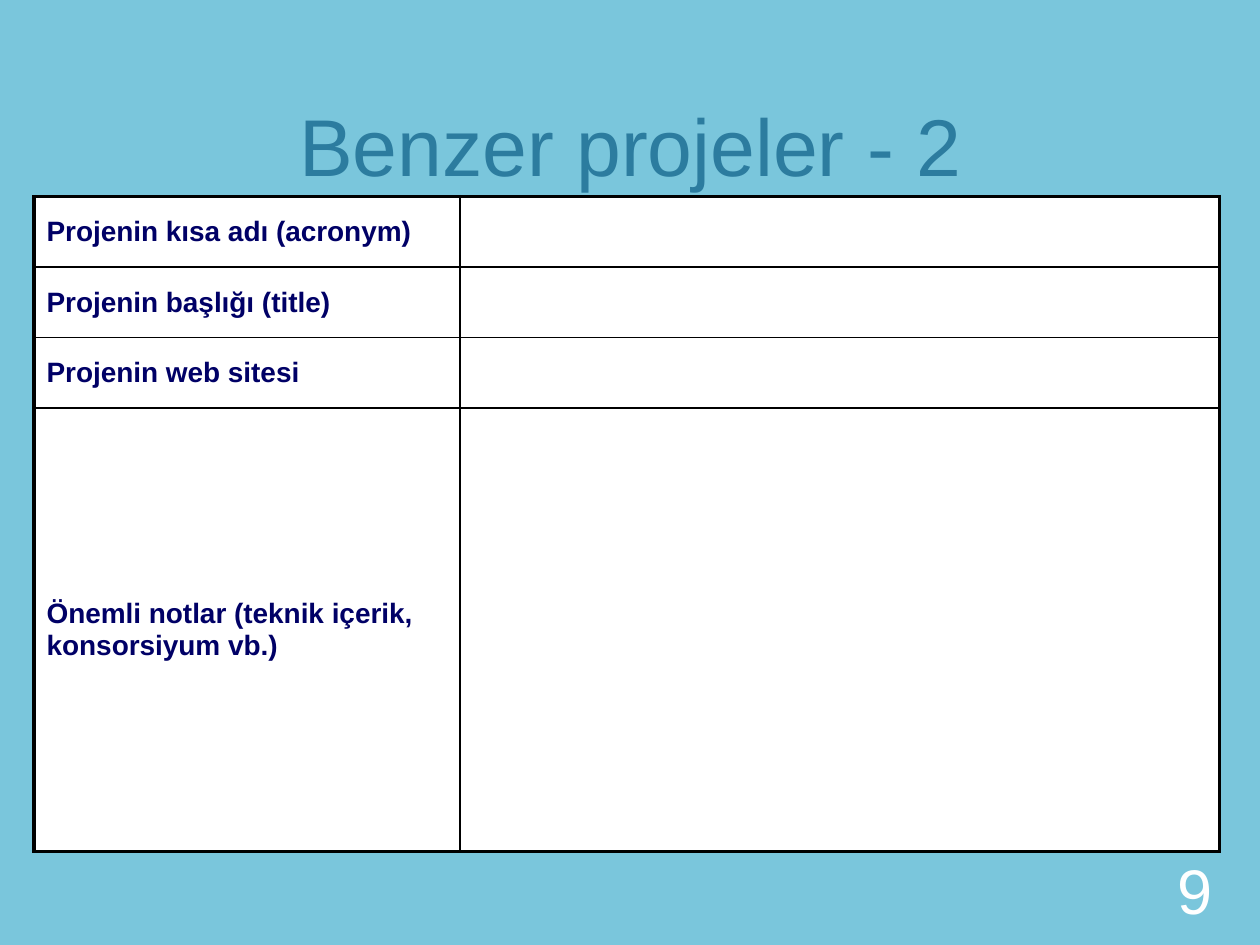
from lxml import etree
from pptx import Presentation
from pptx.dml.color import RGBColor
from pptx.enum.text import MSO_ANCHOR, PP_ALIGN
from pptx.oxml.ns import qn
from pptx.util import Inches, Pt

BOTTOM, MIDDLE = MSO_ANCHOR.BOTTOM, MSO_ANCHOR.MIDDLE
CENTER, RIGHT = PP_ALIGN.CENTER, PP_ALIGN.RIGHT
TITLE_ONLY = 5

FONT = "Arial"
BACKGROUND, TITLE_BLUE, NAVY = "7AC6DC", "2C7C9F", "000066"
WHITE, BLACK = "FFFFFF", "000000"
OUTER_LINE, INNER_LINE = 2.25, 1

LABELS = [
    "Projenin kısa adı (acronym)",
    "Projenin başlığı (title)",
    "Projenin web sitesi",
    "Önemli notlar (teknik içerik, konsorsiyum vb.)",
]
COLUMN_WIDTHS = [3.38, 6.03]
ROW_HEIGHTS = [0.56, 0.56, 0.56, 3.52]


def color(hex_string):
    return RGBColor.from_string(hex_string)


def write(text_frame, text, size, hex_color, anchor, alignment=None, bold=False):
    text_frame.word_wrap = True
    text_frame.vertical_anchor = anchor
    paragraph = text_frame.paragraphs[0]
    paragraph.text = text
    paragraph.alignment = alignment
    font = paragraph.font
    font.name, font.size, font.bold = FONT, Pt(size), bold
    font.color.rgb = color(hex_color)


def place(shape, box):
    shape.left, shape.top, shape.width, shape.height = map(Inches, box)


def add_title(slide, box):
    title = slide.shapes.title
    place(title, box)
    write(title.text_frame, "Benzer projeler - 2", 46, TITLE_BLUE, BOTTOM, CENTER)


def add_page_number(slide, box):
    text_box = slide.shapes.add_textbox(*map(Inches, box))
    write(text_box.text_frame, "9", 36, WHITE, MIDDLE, RIGHT)


def set_borders(cell, widths):
    """Draw the cell's sides; widths maps L, R, T and B to points, in that order."""
    properties = cell._tc.get_or_add_tcPr()
    for side, width in widths.items():
        line = etree.SubElement(properties, qn(f"a:ln{side}"), w=str(Pt(width)))
        fill = etree.SubElement(line, qn("a:solidFill"))
        etree.SubElement(fill, qn("a:srgbClr"), val=BLACK)


def add_project_table(slide, box):
    row_count, column_count = len(ROW_HEIGHTS), len(COLUMN_WIDTHS)
    frame = slide.shapes.add_table(row_count, column_count, *map(Inches, box))
    table = frame.table
    table.first_row = table.horz_banding = False
    for column, width in zip(table.columns, COLUMN_WIDTHS):
        column.width = Inches(width)
    for row, height in zip(table.rows, ROW_HEIGHTS):
        row.height = Inches(height)

    for row in range(row_count):
        for column in range(column_count):
            cell = table.cell(row, column)
            on_edge = {
                "L": column == 0,
                "R": column == column_count - 1,
                "T": row == 0,
                "B": row == row_count - 1,
            }
            set_borders(cell, {side: OUTER_LINE if edge else INNER_LINE
                               for side, edge in on_edge.items()})
            cell.fill.solid()
            cell.fill.fore_color.rgb = color(WHITE)

    for row, label in enumerate(LABELS):
        cell = table.cell(row, 0)
        write(cell.text_frame, label, 16, NAVY, MIDDLE, bold=True)
        cell.vertical_anchor = MIDDLE


def main():
    presentation = Presentation()
    presentation.slide_width, presentation.slide_height = Inches(10), Inches(7.5)
    slide = presentation.slides.add_slide(presentation.slide_layouts[TITLE_ONLY])
    slide.background.fill.solid()
    slide.background.fill.fore_color.rgb = color(BACKGROUND)
    add_title(slide, (0.6, 0.12, 8.8, 1.46))
    add_page_number(slide, (8.64, 6.86, 1.08, 0.4))
    add_project_table(slide, (0.27, 1.56, sum(COLUMN_WIDTHS), sum(ROW_HEIGHTS)))
    presentation.save("out.pptx")


if __name__ == "__main__":
    main()
